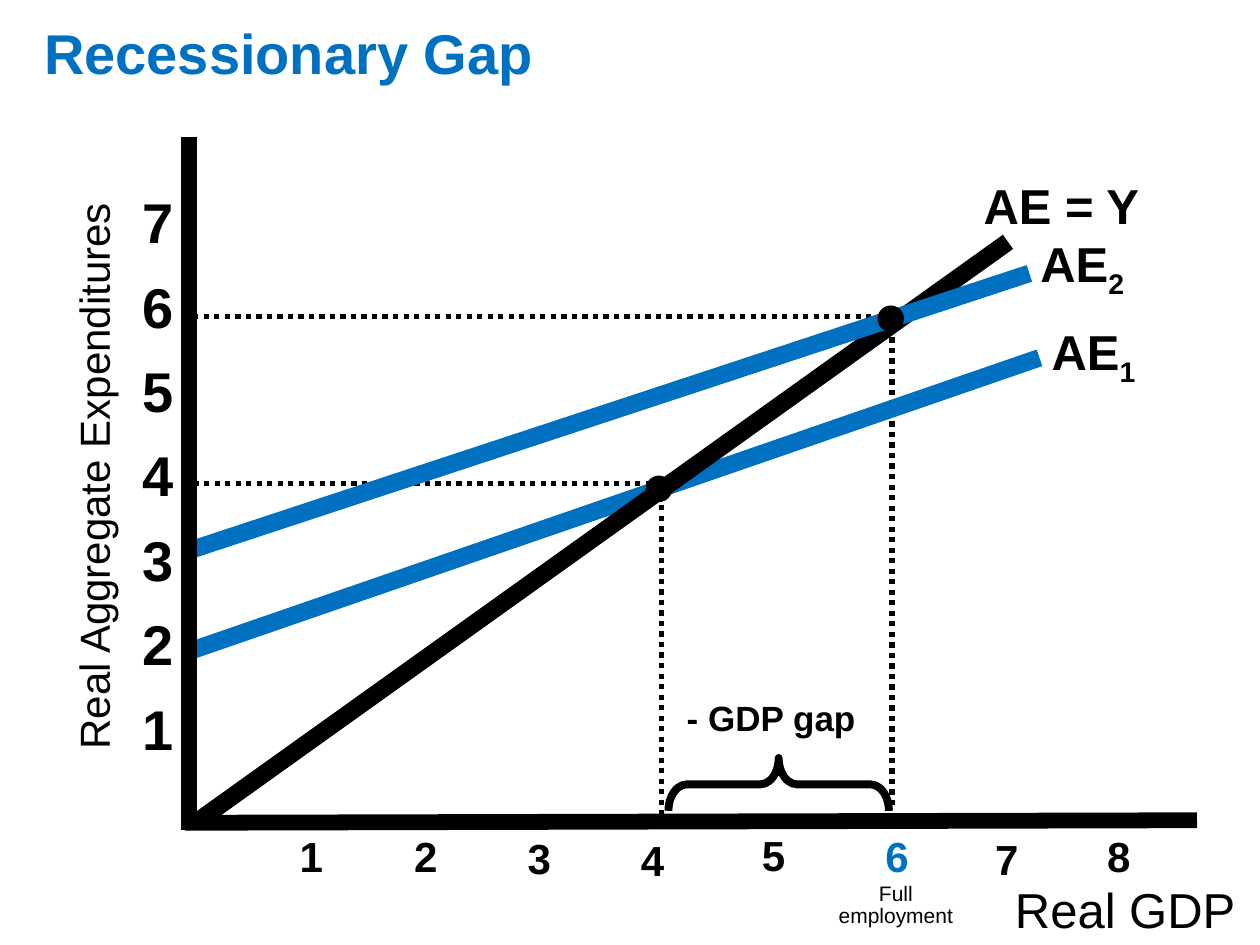
import pptx
import pptx.util
import pptx.dml.color
import pptx.enum.dml
import pptx.enum.shapes
import pptx.enum.text
import pptx.oxml.ns
import lxml.etree

Inches = pptx.util.Inches
Pt = pptx.util.Pt
SHAPE = pptx.enum.shapes.MSO_SHAPE
ALIGN = pptx.enum.text.PP_ALIGN
BLACK = pptx.dml.color.RGBColor(0x00, 0x00, 0x00)
BLUE = pptx.dml.color.RGBColor(0x00, 0x70, 0xC0)

prs = pptx.Presentation()
prs.slide_width, prs.slide_height = Inches(10), Inches(7.5)
s = prs.slides.add_slide(prs.slide_layouts[5])


def add_text(text, x, y, w, h, size, bold=True, color=BLACK, align=ALIGN.CENTER, sub=""):
    sp = s.shapes.add_textbox(Inches(x), Inches(y), Inches(w), Inches(h))
    tf = sp.text_frame
    tf.word_wrap = True
    p = tf.paragraphs[0]
    p.text = text
    p.alignment = align
    p.line_spacing = 0.9
    if sub:
        r = p.add_run()
        r.text = sub
        r._r.get_or_add_rPr().set("baseline", "-25000")
    for r in p.runs:
        r.font.name = "Arial"
        r.font.size = Pt(size)
        r.font.bold = bold
        r.font.color.rgb = color
    return sp


def add_line(x1, y1, x2, y2, width, color=BLACK, dotted=False):
    c = s.shapes.add_connector(pptx.enum.shapes.MSO_CONNECTOR.STRAIGHT,
                               Inches(x1), Inches(y1), Inches(x2), Inches(y2))
    c.line.color.rgb = color
    c.line.width = Pt(width)
    if dotted:
        c.line.dash_style = pptx.enum.dml.MSO_LINE.ROUND_DOT
    lxml.etree.SubElement(c._element.spPr, pptx.oxml.ns.qn("a:effectLst"))


# Title
title = s.shapes.title
title.left, title.top = Inches(0.25), Inches(0.16)
title.width, title.height = Inches(5.33), Inches(0.59)
tf = title.text_frame
tf.text = "Recessionary Gap"
tf.vertical_anchor = pptx.enum.text.MSO_ANCHOR.TOP
p = tf.paragraphs[0]
p.alignment = ALIGN.LEFT
p.line_spacing = 0.9
font = p.runs[0].font
font.name, font.size, font.bold = "Arial", Pt(32), True
font.color.rgb = BLUE

# Scale numbers on both axes
for n in range(1, 8):
    add_text(str(n), 0.75, 6.19 - 0.67 * n, 0.73, 0.58, 32, align=ALIGN.RIGHT)

x_ticks = [(2.47, 6.59), (3.38, 6.59), (4.28, 6.6), (5.18, 6.62),
           (6.14, 6.58), (7.12, 6.59), (7.99, 6.61), (8.88, 6.59)]
for n, (center, top) in enumerate(x_ticks, start=1):
    add_text(str(n), center - 0.4, top, 0.8, 0.47, 24, color=BLUE if n == 6 else BLACK)

# Dotted guides to the two equilibrium points
add_line(7, 2.51, 1.5, 2.51, 3, dotted=True)
add_line(7.08, 2.51, 7.08, 6.42, 3, dotted=True)
add_line(5.25, 3.84, 1.5, 3.84, 3, dotted=True)
add_line(5.25, 4.01, 5.25, 6.51, 3, dotted=True)

# Expenditure lines
add_line(1.5, 5.17, 8.25, 2.84, 10, BLUE)
add_line(1.58, 6.51, 8, 1.92, 10)
add_line(1.5, 4.37, 8.17, 2.17, 10, BLUE)
add_text("AE", 8.17, 2.51, 1.08, 0.52, 28, sub="1 ")
add_text("AE", 8.08, 1.81, 1.08, 0.52, 28, sub="2 ")
add_text("AE = Y ", 7.67, 1.4, 1.5, 0.52, 28)

# Equilibrium points
for x, y in [(6.97, 2.43), (5.13, 3.78)]:
    dot = s.shapes.add_shape(SHAPE.OVAL, Inches(x), Inches(y), Inches(0.2), Inches(0.2))
    dot.shadow.inherit = False
    dot.fill.solid()
    dot.fill.fore_color.rgb = BLACK
    dot.line.color.rgb = BLACK
    dot.line.width = Pt(0.75)

# GDP gap
add_text("- GDP gap", 5.3, 5.52, 1.64, 0.4, 20)
brace = s.shapes.add_shape(SHAPE.RIGHT_BRACE, Inches(5.97), Inches(5.35),
                           Inches(0.42), Inches(1.75))
brace.rotation = 270
brace.adjustments[0] = 0.35
brace.shadow.inherit = False
brace.fill.background()
brace.line.color.rgb = BLACK
brace.line.width = Pt(4.5)

# Axis names
add_text("Real Aggregate Expenditures", -1.84, 3.55, 5.21, 0.46, 24, bold=False).rotation = 270
add_text("Real GDP", 7.83, 6.98, 2.2, 0.52, 28, bold=False)
add_text("Full employment", 6.42, 6.96, 1.38, 0.46, 12, bold=False)

# Axes
add_line(1.47, 6.53, 9.5, 6.51, 9)
add_line(1.5, 1.09, 1.5, 6.59, 9)

prs.save("out.pptx")
